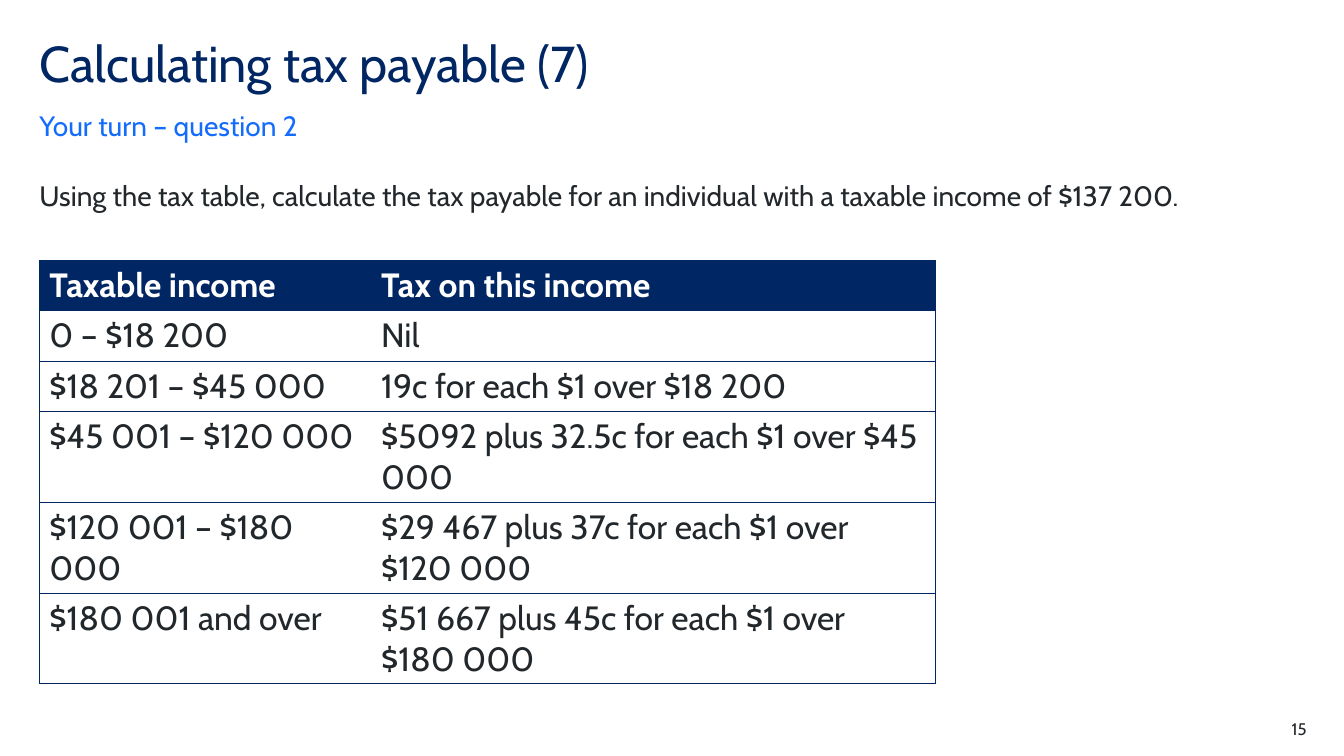
from dataclasses import dataclass

from lxml import etree
from pptx import Presentation
from pptx import util as u
from pptx.dml.color import RGBColor
from pptx.enum import text
from pptx.oxml.ns import qn

PX = 9144  # EMU in one px, at 100 px to the inch
FONT = "Cabin"
NAVY, BLUE, INK, WHITE = "002664", "146CFD", "22272B", "FFFFFF"


@dataclass
class Label:
    words: str
    box: tuple[int, int, int, int]
    size: int
    color: str
    align: text.PP_ALIGN = text.PP_ALIGN.LEFT
    anchor: text.MSO_ANCHOR = text.MSO_ANCHOR.TOP
    line: float = 1.0


LABELS = [
    Label("Calculating tax payable (7)", (39, 39, 1102, 60), 36, NAVY, line=0.9),
    Label("Your turn – question 2", (39, 107, 1102, 34), 20, BLUE,
          anchor=text.MSO_ANCHOR.BOTTOM),
    Label("Using the tax table, calculate the tax payable for an individual "
          "with a taxable income of $137 200.", (39, 177, 1256, 60), 20, INK),
    Label("15", (1217, 713, 79, 20), 12, INK, align=text.PP_ALIGN.RIGHT),
]

TAX_ROWS = [
    ("Taxable income", "Tax on this income"),
    ("0 – $18 200", "Nil"),
    ("$18 201 – $45 000", "19c for each $1 over $18 200"),
    ("$45 001 – $120 000", "$5092 plus 32.5c for each $1 over $45 000"),
    ("$120 001 – $180 000", "$29 467 plus 37c for each $1 over $120 000"),
    ("$180 001 and over", "$51 667 plus 45c for each $1 over $180 000"),
]
COL_WIDTHS = (329, 560)
ROW_HEIGHT = 41


def px(n: int) -> int:
    return u.Emu(n * PX)


def rgb(color: str) -> RGBColor:
    return RGBColor.from_string(color)


def style(p, size: int, color: str, bold: bool = False) -> None:
    p.font.name = FONT
    p.font.size = u.Pt(size)
    p.font.bold = bold
    p.font.color.rgb = rgb(color)


def add_label(s, label: Label) -> None:
    tf = s.shapes.add_textbox(*map(px, label.box)).text_frame
    tf.word_wrap = True
    tf.margin_left = tf.margin_top = tf.margin_right = tf.margin_bottom = 0
    tf.vertical_anchor = label.anchor
    p = tf.paragraphs[0]
    p.text = label.words
    p.alignment = label.align
    p.line_spacing = label.line
    style(p, label.size, label.color)


def set_borders(cell, sides: str) -> None:
    """Draw the named sides (of L, R, T, B) and clear the others."""
    tc_pr = cell._tc.get_or_add_tcPr()
    for i, side in enumerate("LRTB"):
        ln = etree.Element(qn(f"a:ln{side}"), w=str(u.Pt(0.5)))
        if side in sides:
            fill = etree.SubElement(ln, qn("a:solidFill"))
            etree.SubElement(fill, qn("a:srgbClr"), val=NAVY)
        else:
            etree.SubElement(ln, qn("a:noFill"))
        tc_pr.insert(i, ln)


def add_tax_table(s, left: int, top: int) -> None:
    table = s.shapes.add_table(
        len(TAX_ROWS), len(COL_WIDTHS), px(left), px(top),
        px(sum(COL_WIDTHS)), px(ROW_HEIGHT * len(TAX_ROWS))).table
    table.horz_banding = False
    for col, width in zip(table.columns, COL_WIDTHS):
        col.width = px(width)
    for r, row in enumerate(TAX_ROWS):
        table.rows[r].height = px(ROW_HEIGHT)
        header = r == 0
        for c, words in enumerate(row):
            cell = table.cell(r, c)
            p = cell.text_frame.paragraphs[0]
            p.text = words
            style(p, 24, WHITE if header else INK, bold=header)
            if header:
                cell.fill.solid()
                cell.fill.fore_color.rgb = rgb(NAVY)
            else:
                cell.fill.background()
            set_borders(cell, "TB" + "LR"[c])


def main() -> None:
    prs = Presentation()
    prs.slide_width, prs.slide_height = px(1333), px(750)
    s = prs.slides.add_slide(prs.slide_layouts[6])
    # Title, subtitle, question and page number
    for label in LABELS:
        add_label(s, label)
    # Tax brackets
    add_tax_table(s, 39, 258)
    prs.save("out.pptx")


if __name__ == "__main__":
    main()
